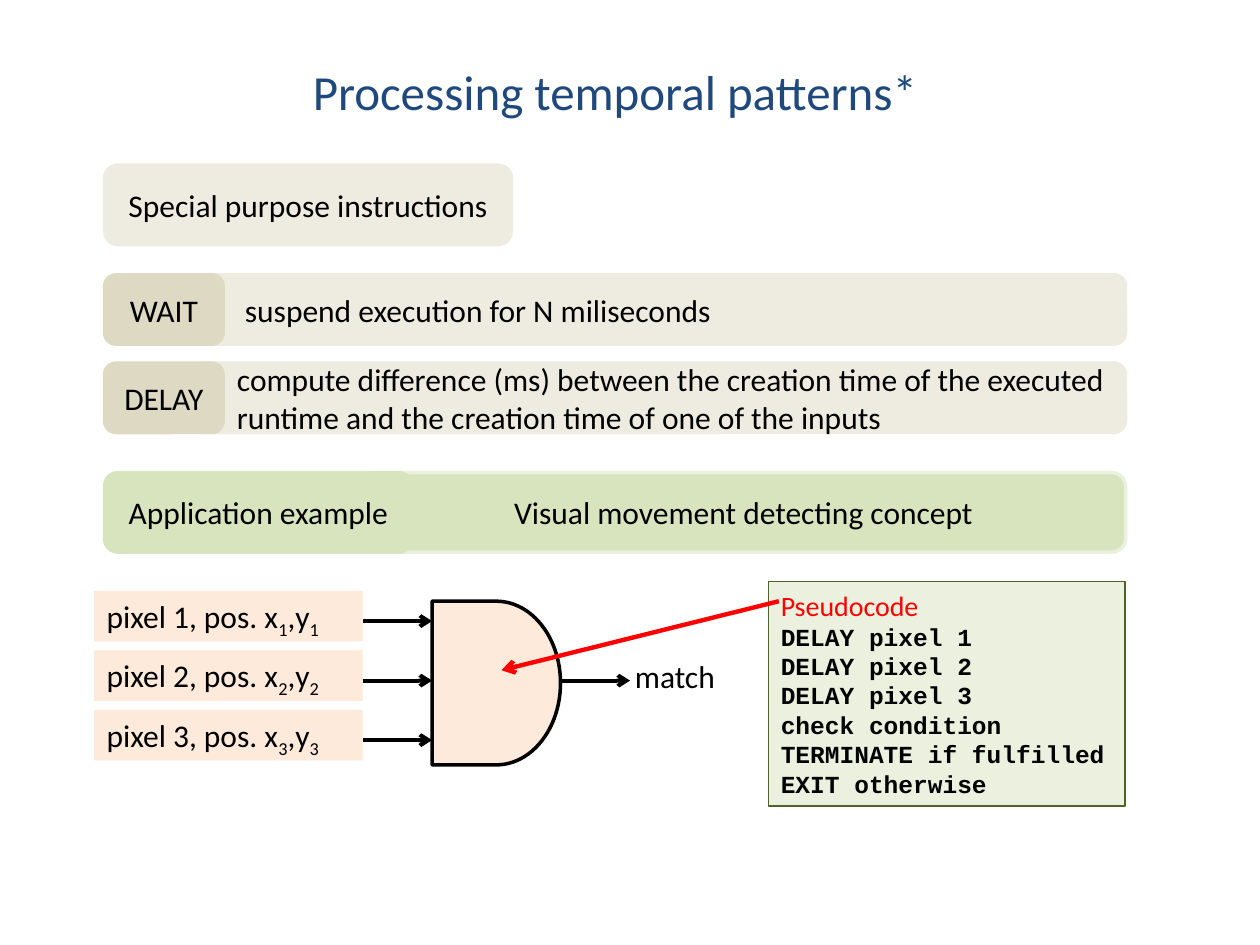
"""Build the slide on processing temporal patterns."""
import pptx
import pptx.dml.color
import pptx.enum.shapes
import pptx.enum.text
import pptx.oxml
import pptx.oxml.ns
import pptx.util

Cm, Pt = pptx.util.Cm, pptx.util.Pt
SHAPE = pptx.enum.shapes.MSO_SHAPE
ALIGN = pptx.enum.text.PP_ALIGN
ANCHOR = pptx.enum.text.MSO_ANCHOR

THEME = {
    "sans": "Calibri", "mono": "Courier New",
    "title_size": 28, "body_size": 18, "caption_size": 16, "code_size": 14,
    "title": "1F497D", "text": "000000", "accent": "FF0000",
    "sand": "EEECE1", "dark_sand": "DDD9C3",
    "green": "D7E4BD", "pale_green": "EBF1DE", "deep_green": "4F6228",
    "peach": "FDEADA",
}

TITLE = "Processing temporal patterns*"
HEADING = "Special purpose instructions"
INSTRUCTIONS = [
    ("WAIT", ["suspend execution for N miliseconds"], 0.96),
    ("DELAY", ["compute difference (ms) between the creation time of the executed",
               "runtime and the creation time of one of the inputs"], 0.8),
]
EXAMPLE = ("Application example", "Visual movement detecting concept")
PIXELS = ["1", "2", "3"]
RESULT = "match"
PSEUDOCODE = ("Pseudocode", [
    "DELAY pixel 1", "DELAY pixel 2", "DELAY pixel 3",
    "check condition", "TERMINATE if fulfilled", "EXIT otherwise",
])

LEFT, RIGHT = 2.11, 22.69
INSTRUCTION_TOP, INSTRUCTION_PITCH, INSTRUCTION_HEIGHT = 5.54, 1.78, 1.4
DESCRIPTION_LEFT = 3.91
BAND_HEIGHT, EXAMPLE_TOP, CONCEPT_LEFT = 1.6, 9.53, 7.29
PIXEL_LEFT, PIXEL_TOP, PIXEL_WIDTH, PIXEL_PITCH = 1.9, 11.91, 5.41, 1.2
LABEL_HEIGHT, WIRE_OFFSET = 1.02, 0.61
GATE = (8.71, 12.12, 2.59, 3.3)


def color(name):
    return pptx.dml.color.RGBColor.from_string(THEME[name])


def write(paragraph, text, size="body_size", ink="text", face="sans", bold=False, subscript=False):
    run = paragraph.add_run()
    run.text = text
    run.font.size, run.font.name = Pt(THEME[size]), THEME[face]
    run.font.color.rgb, run.font.bold = color(ink), bold
    if subscript:
        run.font._element.set("baseline", "-25000")


def add_box(slide, preset, place, fill, edge=None, width=2):
    box = slide.shapes.add_shape(preset, *map(Cm, place))
    box.shadow.inherit = False
    box.fill.solid()
    box.fill.fore_color.rgb = color(fill)
    if edge:
        box.line.color.rgb, box.line.width = color(edge), Pt(width)
    else:
        box.line.fill.background()
    frame = box.text_frame
    frame.word_wrap = True
    frame.vertical_anchor = ANCHOR.MIDDLE
    frame.paragraphs[0].alignment = ALIGN.LEFT
    return frame


def add_band(slide, place, fill, lines, edge=None, align=ALIGN.CENTER, inset=0.25):
    frame = add_box(slide, SHAPE.ROUNDED_RECTANGLE, place, fill, edge or fill)
    frame.margin_left = Cm(inset)
    paragraph = frame.paragraphs[0]
    paragraph.alignment = align
    for index, line in enumerate(lines):
        if index:
            paragraph.add_line_break()
        write(paragraph, line)


def add_label(slide, place, text, align=ALIGN.LEFT, **style):
    frame = slide.shapes.add_textbox(*map(Cm, place)).text_frame
    frame.word_wrap = False
    frame.paragraphs[0].alignment = align
    write(frame.paragraphs[0], text, **style)


def add_arrow(slide, start, end, ink="text", width=2.25):
    arrow = slide.shapes.add_connector(
        pptx.enum.shapes.MSO_CONNECTOR.STRAIGHT, *map(Cm, (*start, *end)))
    arrow.line.color.rgb, arrow.line.width = color(ink), Pt(width)
    qn, element = pptx.oxml.ns.qn, pptx.oxml.xmlchemy.OxmlElement
    head = element("a:tailEnd")
    head.set("type", "arrow")
    properties = arrow._element.spPr
    properties.find(qn("a:ln")).append(head)
    properties.append(element("a:effectLst"))


def add_instructions(slide):
    add_band(slide, (LEFT, 3.33, 8.2, BAND_HEIGHT), "sand", [HEADING])
    for index, (name, description, inset) in enumerate(INSTRUCTIONS):
        top = INSTRUCTION_TOP + index * INSTRUCTION_PITCH
        add_band(slide, (DESCRIPTION_LEFT, top, RIGHT - DESCRIPTION_LEFT, INSTRUCTION_HEIGHT),
                 "sand", description, align=ALIGN.LEFT, inset=inset)
        add_band(slide, (LEFT, top, 2.39, INSTRUCTION_HEIGHT), "dark_sand", [name])


def add_example(slide):
    heading, concept = EXAMPLE
    add_band(slide, (CONCEPT_LEFT, EXAMPLE_TOP, RIGHT - CONCEPT_LEFT, BAND_HEIGHT),
             "green", [concept], edge="pale_green")
    add_band(slide, (LEFT, EXAMPLE_TOP, 6.2, BAND_HEIGHT), "green", [heading])


def add_circuit(slide):
    gate_left, gate_top, gate_width, gate_height = GATE
    add_box(slide, SHAPE.FLOWCHART_DELAY, GATE, "peach", "text")
    for index, number in enumerate(PIXELS):
        top = PIXEL_TOP + index * PIXEL_PITCH
        frame = add_box(slide, SHAPE.RECTANGLE,
                        (PIXEL_LEFT, top, PIXEL_WIDTH, LABEL_HEIGHT), "peach")
        frame.vertical_anchor = ANCHOR.TOP
        for text, subscript in [(f"pixel {number}, pos. x", False), (number, True),
                                (",y", False), (number, True)]:
            write(frame.paragraphs[0], text, subscript=subscript)
        wire = top + WIRE_OFFSET
        add_arrow(slide, (PIXEL_LEFT + PIXEL_WIDTH, wire), (gate_left, wire))
    output = PIXEL_TOP + PIXEL_PITCH + WIRE_OFFSET
    add_arrow(slide, (gate_left + gate_width, output), (12.7, output))
    add_label(slide, (12.55, 13.13, 2.13, LABEL_HEIGHT), RESULT)


def add_pseudocode(slide):
    caption, steps = PSEUDOCODE
    frame = add_box(slide, SHAPE.RECTANGLE, (15.49, 11.73, 7.19, 4.52),
                    "pale_green", "deep_green", 0.75)
    frame.vertical_anchor = ANCHOR.TOP
    write(frame.paragraphs[0], caption, "caption_size", "accent")
    for step in steps:
        paragraph = frame.add_paragraph()
        paragraph.alignment = ALIGN.LEFT
        write(paragraph, step, "code_size", face="mono", bold=True)
    add_arrow(slide, (15.7, 12.12), (10.11, 13.51), "accent", 2.5)


def main():
    deck = pptx.Presentation()
    deck.slide_width, deck.slide_height = Cm(25.4), Cm(19.05)
    slide = deck.slides.add_slide(deck.slide_layouts[6])
    add_label(slide, (5.97, 1.12, 12.85, 1.45), TITLE, ALIGN.CENTER,
              size="title_size", ink="title")
    add_instructions(slide)
    add_example(slide)
    add_circuit(slide)
    add_pseudocode(slide)
    deck.save("out.pptx")


if __name__ == "__main__":
    main()
